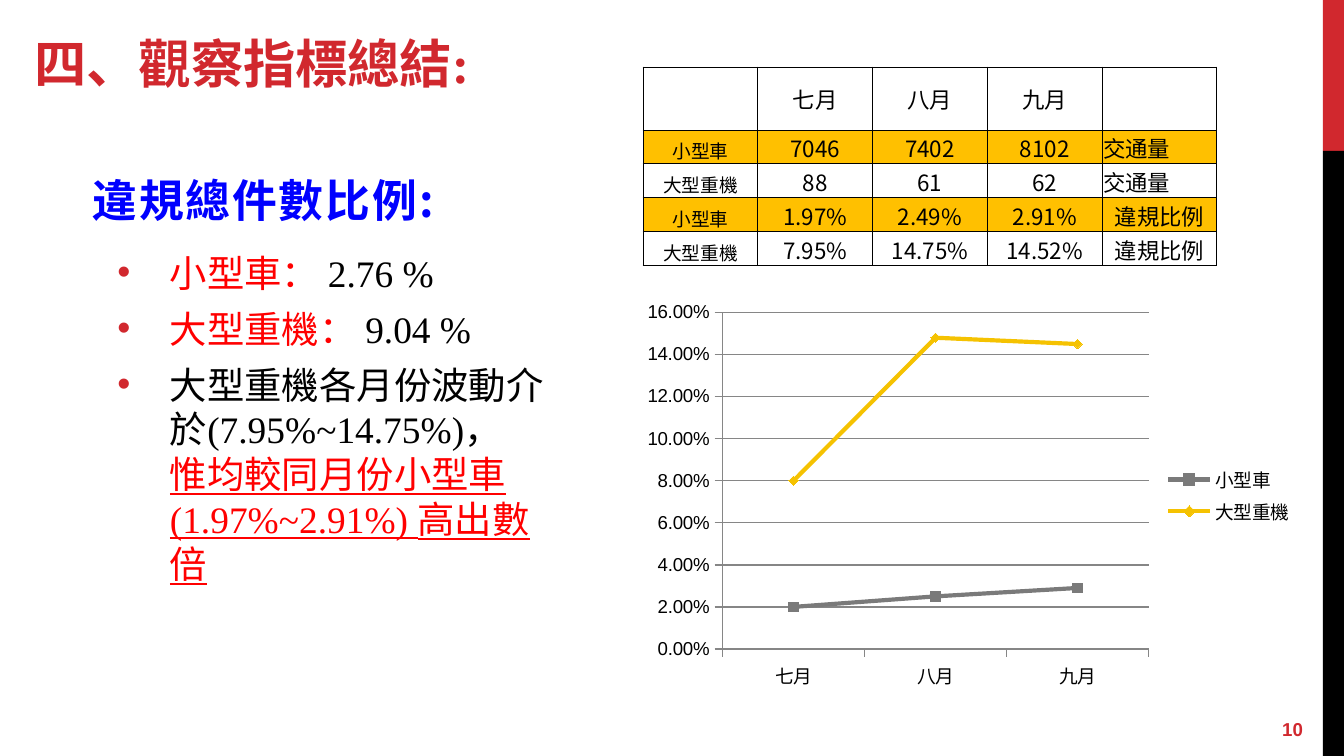
from lxml.etree import SubElement
from pptx import Presentation
from pptx.chart.data import CategoryChartData
from pptx.dml.color import RGBColor
from pptx.enum.chart import XL_CHART_TYPE as Kind, XL_LEGEND_POSITION as Legend
from pptx.enum.chart import XL_MARKER_STYLE as Marker, XL_TICK_MARK as Tick
from pptx.enum.shapes import MSO_SHAPE as Shape
from pptx.enum.text import MSO_ANCHOR as Anchor, MSO_AUTO_SIZE as Fit, PP_ALIGN as Align
from pptx.oxml.ns import qn
from pptx.util import Inches, Pt

SCALE = 914400 / 134.4
RED, BLACK, BRIGHT, BLUE = "D1282E", "000000", "FF0000", "0000FF"
GOLD, GREY = "FFC000", "868686"
SERIF, SANS, CJK = "Times New Roman", "Arial", "Noto Sans CJK TC"

MONTHS = ["七月", "八月", "九月"]
ROWS = [
    ["", *MONTHS, ""],
    ["小型車", "7046", "7402", "8102", "交通量"],
    ["大型重機", "88", "61", "62", "交通量"],
    ["小型車", "1.97%", "2.49%", "2.91%", "違規比例"],
    ["大型重機", "7.95%", "14.75%", "14.52%", "違規比例"],
]
SERIES = [
    ("小型車", [0.02, 0.025, 0.029], "7A7A7A", Marker.SQUARE),
    ("大型重機", [0.08, 0.148, 0.145], "F5C201", Marker.DIAMOND),
]
POINTS = [
    [("小型車： ", BRIGHT), ("2.76 %", BLACK)],
    [("大型重機： ", BRIGHT), ("9.04 %", BLACK)],
    [("大型重機各月份波動介於(7.95%~14.75%)，", BLACK),
     ("惟均較同月份小型車(1.97%~2.91%) 高出數倍", BRIGHT)],
]


def px(n):
    return round(n * SCALE)


def paint(hue, code):
    hue.rgb = RGBColor.from_string(code)


def fill(obj, code):
    obj.fill.solid()
    paint(obj.fill.fore_color, code)


def style(font, size, name, code=BLACK, bold=False):
    font.size, font.name, font.bold = Pt(size), name, bold
    paint(font.color, code)


def set_asian(run):
    """Name the East Asian font, which decides how full-width marks sit."""
    SubElement(run._r.get_or_add_rPr(), qn("a:ea"), typeface=CJK)


def place(shape, left, top, width, height):
    shape.left, shape.top = px(left), px(top)
    shape.width, shape.height = px(width), px(height)
    shape.text_frame.auto_size = Fit.NONE
    shape.text_frame.word_wrap = True


def add_band(slide, top, height, code):
    band = slide.shapes.add_shape(Shape.RECTANGLE, px(1323), px(top), px(21), px(height))
    band.shadow.inherit = False
    fill(band, code)
    band.line.fill.background()


def write(shape, box, text, size, name, code, anchor):
    """Put one bold line of text into a moved shape."""
    place(shape, *box)
    frame = shape.text_frame
    frame.vertical_anchor = anchor
    para = frame.paragraphs[0]
    para.alignment = Align.LEFT
    run = para.add_run()
    run.text = text
    style(para.font, size, name, code, True)
    set_asian(run)
    return para


def set_bullet(para):
    props = para._p.get_or_add_pPr()
    props.set("marL", str(Inches(1)))
    props.set("indent", str(Inches(-0.39)))
    hue = SubElement(props, qn("a:buClr"))
    SubElement(hue, qn("a:srgbClr"), val=RED)
    SubElement(props, qn("a:buFont"), typeface=SANS)
    SubElement(props, qn("a:buChar"), char="•")


def add_points(body):
    place(body, 22, 243, 556, 423)
    frame = body.text_frame
    for i, parts in enumerate(POINTS):
        para = frame.add_paragraph() if i else frame.paragraphs[0]
        para.level = 1
        para.space_before, para.line_spacing = Pt(6), Pt(24)
        set_bullet(para)
        for text, code in parts:
            last = text.startswith("惟")
            if last:
                para.add_line_break()
            run = para.add_run()
            run.text = text
            style(run.font, 20, SERIF, code)
            run.font.underline = last
            set_asian(run)


def set_border(cell):
    props = cell._tc.get_or_add_tcPr()
    for i, side in enumerate(["lnL", "lnR", "lnT", "lnB"]):
        line = props.makeelement(qn(f"a:{side}"), {"w": str(Pt(0.5))})
        solid = SubElement(line, qn("a:solidFill"))
        SubElement(solid, qn("a:srgbClr"), val=BLACK)
        props.insert(i, line)


def add_grid(slide):
    table = slide.shapes.add_table(5, 5, px(643), px(67), px(574), px(199)).table
    table.first_row = table.horz_banding = False
    for r, texts in enumerate(ROWS):
        table.rows[r].height = px(34 if r else 63)
        for c, text in enumerate(texts):
            cell = table.cell(r, c)
            label = r > 0 and c == 0
            cell.margin_left = cell.margin_right = cell.margin_top = px(1)
            cell.margin_bottom = 0
            cell.vertical_anchor = Anchor.BOTTOM if label else Anchor.MIDDLE
            cell.text = text
            para = cell.text_frame.paragraphs[0]
            para.alignment = Align.LEFT if text == "交通量" else Align.CENTER
            style(para.font, 10 if label else 12, CJK)
            if r % 2:
                fill(cell, GOLD)
            else:
                cell.fill.background()
            set_border(cell)


def add_lines(slide):
    data = CategoryChartData(number_format="0.00%")
    data.categories = MONTHS
    for name, rates, *_ in SERIES:
        data.add_series(name, rates)
    chart = slide.shapes.add_chart(
        Kind.LINE_MARKERS, px(634), px(294), px(672), px(403), data).chart
    style(chart.font, 10, SANS)
    chart.has_title = False
    chart.has_legend = True
    chart.legend.position = Legend.RIGHT
    chart.legend.include_in_layout = False

    scale = chart.value_axis
    scale.minimum_scale, scale.maximum_scale, scale.major_unit = 0, 0.16, 0.02
    scale.tick_labels.number_format = "0.00%"
    scale.tick_labels.number_format_is_linked = False
    scale.has_major_gridlines = True
    for axis in (scale, chart.category_axis):
        axis.major_tick_mark = Tick.OUTSIDE
    for part in (scale, chart.category_axis, scale.major_gridlines):
        paint(part.format.line.color, GREY)
        part.format.line.width = Pt(0.75)

    plot = chart.plots[0]
    plot.vary_by_categories = False
    for line, (_, _, code, mark) in zip(plot.series, SERIES):
        line.smooth = False
        paint(line.format.line.color, code)
        line.format.line.width = Pt(2.25)
        line.marker.style, line.marker.size = mark, 5
        fill(line.marker.format, code)
        paint(line.marker.format.line.color, code)


def main():
    deck = Presentation()
    deck.slide_width, deck.slide_height = px(1344), px(756)
    slide = deck.slides.add_slide(deck.slide_layouts[4])
    title, head, body, *spare = slide.placeholders
    for shape in spare:
        shape.element.getparent().remove(shape.element)

    add_band(slide, 0, 151, RED)
    add_band(slide, 151, 605, BLACK)
    write(title, (21, 22, 820, 79), "四、觀察指標總結:", 28, SERIF, RED, Anchor.BOTTOM)
    para = write(head, (79, 163, 484, 70), "違規總件數比例:", 24,
                 "Noto Sans CJK SC", BLUE, Anchor.BOTTOM)
    para.space_before = Pt(4)
    para.runs[0]._r.get_or_add_rPr().set("spc", "100")
    add_points(body)
    number = slide.shapes.add_textbox(0, 0, 0, 0)
    write(number, (1269, 703, 62, 53), "10", 10, SANS, RED, Anchor.MIDDLE)
    add_grid(slide)
    add_lines(slide)
    deck.save("out.pptx")


if __name__ == "__main__":
    main()
